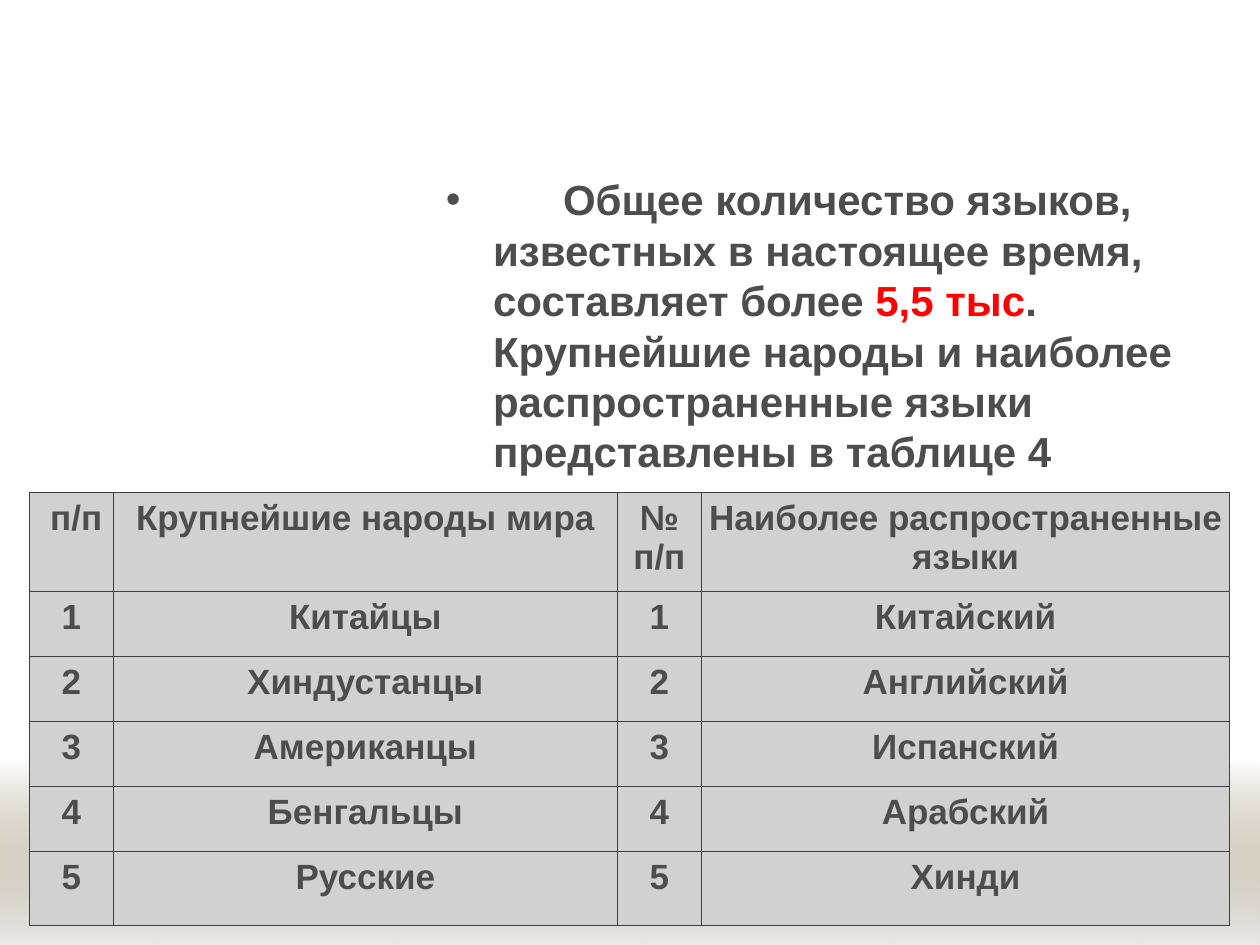
from lxml.etree import SubElement
from pptx import Presentation
from pptx.dml.color import RGBColor
from pptx.enum.shapes import MSO_SHAPE
from pptx.enum.text import PP_ALIGN
from pptx.oxml.ns import qn
from pptx.util import Pt

COLORS = {
    "text": "4D4D4D",
    "accent": "FF0000",
    "cell": "D1D1D1",
    "border": "3F3F3F",
    "band_top": "765E2F",
    "band_bottom": "EAEAEA",
}
FONT = "Arial"
INTRO = [
    ("\tОбщее количество языков, известных в настоящее время, составляет более ", "text"),
    ("5,5 тыс", "accent"),
    (". Крупнейшие народы и наиболее распространенные языки представлены в таблице 4", "text"),
]
HEADER = (" п/п", "Крупнейшие народы мира", "№ п/п", "Наиболее распространенные языки")
PEOPLES = ["Китайцы", "Хиндустанцы", "Американцы", "Бенгальцы", "Русские"]
LANGUAGES = ["Китайский", "Английский", "Испанский", "Арабский", "Хинди"]
COLUMN_WIDTHS = [48, 288, 48, 302]
ROW_HEIGHTS = [56.6] + [37.2] * 4 + [42]


def color(name):
    return RGBColor.from_string(COLORS[name])


def style_font(font, size, name):
    font.name = FONT
    font.size = Pt(size)
    font.bold = True
    font.color.rgb = color(name)


def add_band(slide):
    band = slide.shapes.add_shape(MSO_SHAPE.RECTANGLE, Pt(0), Pt(434), Pt(720), Pt(106))
    band.shadow.inherit = False
    band.line.fill.background()
    band.fill.gradient()
    band.fill.gradient_angle = 270
    stops = band.fill.gradient_stops
    for stop, position, name in zip(stops, (0, 1), ("band_top", "band_bottom")):
        stop.position = position
        stop.color.rgb = color(name)
    top_color = band.fill._fill._gradFill.find(".//" + qn("a:srgbClr"))
    SubElement(top_color, qn("a:alpha"), val="0")


def add_intro(slide):
    box = slide.shapes.add_textbox(Pt(247.7), Pt(95.8), Pt(472.3), Pt(191.5))
    box.text_frame.word_wrap = True
    para = box.text_frame.paragraphs[0]
    para.line_spacing = Pt(28.8)
    properties = para._p.get_or_add_pPr()
    properties.set("marL", str(Pt(27)))
    properties.set("indent", str(Pt(-27)))
    SubElement(properties, qn("a:buFont"), typeface=FONT)
    SubElement(properties, qn("a:buChar"), char="•")
    tabs = SubElement(properties, qn("a:tabLst"))
    SubElement(tabs, qn("a:tab"), pos=str(Pt(67)), algn="l")
    for text, name in INTRO:
        span = para.add_run()
        span.text = text
        style_font(span.font, 24, name)


def add_borders(cell):
    properties = cell._tc.get_or_add_tcPr()
    for side in ("lnL", "lnR", "lnT", "lnB"):
        line = SubElement(properties, qn("a:" + side), w=str(Pt(0.75)))
        fill = SubElement(line, qn("a:solidFill"))
        SubElement(fill, qn("a:srgbClr"), val=COLORS["border"])


def fill_cell(cell, text):
    add_borders(cell)
    cell.fill.solid()
    cell.fill.fore_color.rgb = color("cell")
    cell.margin_left = cell.margin_right = Pt(3.6)
    cell.margin_top = cell.margin_bottom = Pt(3.6)
    cell.text_frame.text = text
    para = cell.text_frame.paragraphs[0]
    para.alignment = PP_ALIGN.CENTER
    style_font(para.runs[0].font, 20, "text")


def add_ranking(slide):
    rows = [HEADER]
    for number, (people, language) in enumerate(zip(PEOPLES, LANGUAGES), 1):
        rows.append((str(number), people, str(number), language))
    frame = slide.shapes.add_table(
        len(rows), len(HEADER), Pt(16.8), Pt(281.3),
        Pt(sum(COLUMN_WIDTHS)), Pt(sum(ROW_HEIGHTS)),
    )
    table = frame.table
    for column, width in zip(table.columns, COLUMN_WIDTHS):
        column.width = Pt(width)
    for row, height, texts in zip(table.rows, ROW_HEIGHTS, rows):
        row.height = Pt(height)
        for cell, text in zip(row.cells, texts):
            fill_cell(cell, text)


def main():
    deck = Presentation()
    deck.slide_width = Pt(720)
    deck.slide_height = Pt(540)
    slide = deck.slides.add_slide(deck.slide_layouts[6])
    add_band(slide)
    add_intro(slide)
    add_ranking(slide)
    deck.save("out.pptx")


if __name__ == "__main__":
    main()
